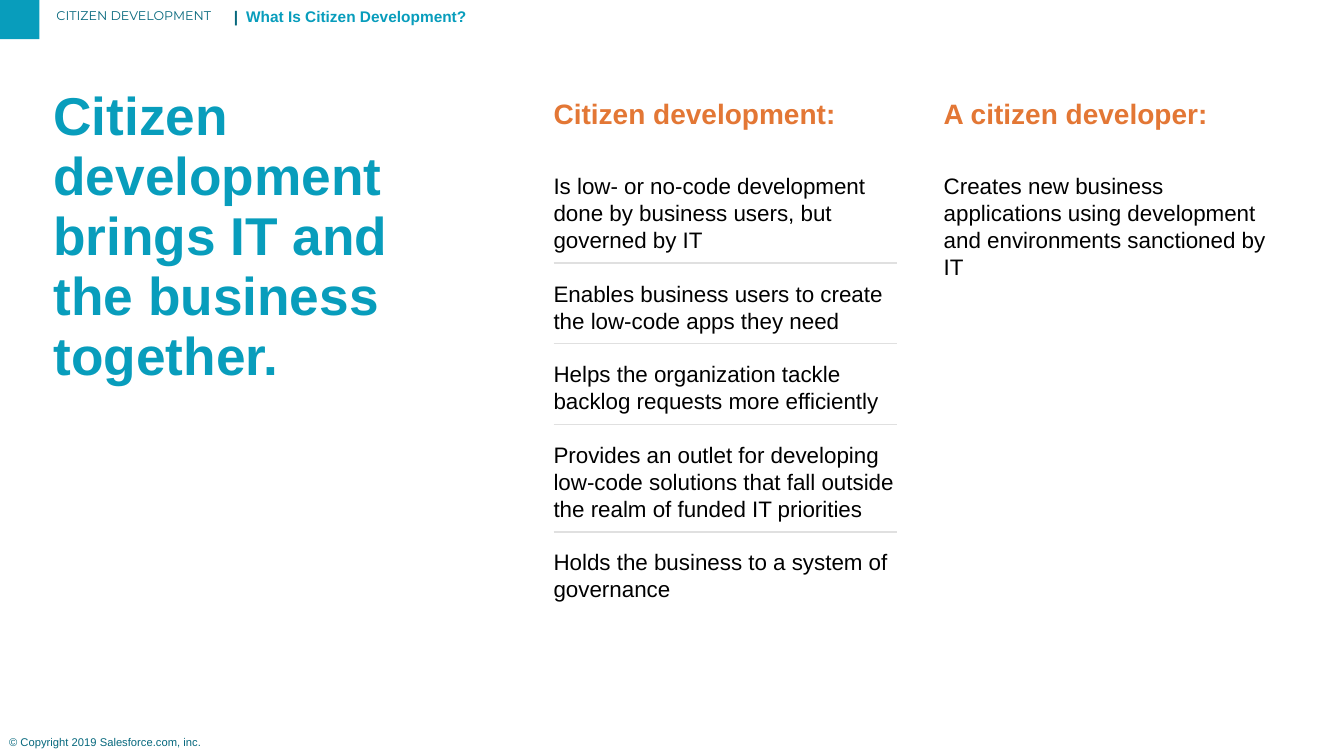
from lxml import etree
from pptx import Presentation
from pptx.dml.color import RGBColor
from pptx.enum.shapes import MSO_CONNECTOR, MSO_SHAPE
from pptx.enum.text import MSO_ANCHOR, MSO_AUTO_SIZE, PP_ALIGN
from pptx.oxml.ns import qn
from pptx.util import Inches, Pt

LEFT = PP_ALIGN.LEFT
TOP = MSO_ANCHOR.TOP
NO_AUTOFIT = MSO_AUTO_SIZE.NONE
RECTANGLE = MSO_SHAPE.RECTANGLE
STRAIGHT = MSO_CONNECTOR.STRAIGHT

COLORS = {"teal": "089DBC", "dark_teal": "06687D", "orange": "E37735",
          "black": "000000", "rule": "E0E0E0"}

HEADLINE = "Citizen development brings IT and the business together."
COURSE = "CITIZEN DEVELOPMENT"
TOPIC = "What Is Citizen Development?"
COPYRIGHT = "© Copyright 2019 Salesforce.com, inc."
COLUMNS = [
    {"heading": "Citizen development:",
     "box": (5.44, 0.93, 3.61, 6.01),
     "items": [
         "Is low- or no-code development done by business users, but governed by IT",
         "Enables business users to create the low-code apps they need",
         "Helps the organization tackle backlog requests more efficiently",
         "Provides an outlet for developing low-code solutions that fall outside "
         "the realm of funded IT priorities",
         "Holds the business to a system of governance"]},
    {"heading": "A citizen developer:",
     "box": (9.31, 0.93, 3.41, 4.96),
     "items": ["Creates new business applications using development and "
               "environments sanctioned by IT"]},
]
LINE_PITCH = 19.2  # points
RULE_LEFT, RULE_RIGHT, FIRST_RULE = 5.49, 8.9, 2.61
LINES_BETWEEN_RULES = [2, 2, 3]


def color(name):
    return RGBColor.from_string(COLORS[name])


def place(shape, box):
    """Position a text shape and give its frame the common settings."""
    shape.left, shape.top, shape.width, shape.height = map(Inches, box)
    frame = shape.text_frame
    frame.word_wrap = True
    frame.auto_size = NO_AUTOFIT
    frame.vertical_anchor = TOP
    frame.margin_left = frame.margin_right = Inches(0.05)
    frame.margin_top = frame.margin_bottom = Inches(0.05)
    return frame


def style(paragraph, size, color_name, bold=False, spacing=1.0, before=0, name="Arial"):
    paragraph.alignment = LEFT
    paragraph.line_spacing = spacing
    paragraph.space_before = Pt(before)
    paragraph.space_after = Pt(0)
    font = paragraph.font
    font.name, font.size, font.bold = name, Pt(size), bold
    font.color.rgb = color(color_name)


def remove_bullet(paragraph):
    properties = paragraph._p.get_or_add_pPr()
    properties.set("marL", "0")
    properties.set("indent", "0")
    etree.SubElement(properties, qn("a:buNone"))


def add_label(slide, text, box, **look):
    frame = place(slide.shapes.add_textbox(0, 0, 0, 0), box)
    frame.text = text
    style(frame.paragraphs[0], **look)


def add_topic(slide):
    paragraph = place(slide.shapes.add_textbox(0, 0, 0, 0), (2.27, 0.06, 3.75, 0.27)).paragraphs[0]
    tabs = etree.SubElement(paragraph._p.get_or_add_pPr(), qn("a:tabLst"))
    etree.SubElement(tabs, qn("a:tab"), pos=str(Inches(0.12)), algn="l")
    style(paragraph, 11, "teal", bold=True, spacing=0.8)
    bar = paragraph.add_run()
    bar.text = "|\t"
    bar.font.color.rgb = color("dark_teal")
    paragraph.add_run().text = TOPIC


def fill_column(placeholder, column):
    frame = place(placeholder, column["box"])
    frame.text = "\n".join([column["heading"], *column["items"]])
    heading, *items = frame.paragraphs
    remove_bullet(heading)
    style(heading, 20, "orange", bold=True, spacing=0.94)
    for index, item in enumerate(items):
        remove_bullet(item)
        style(item, 16, "black", spacing=Pt(LINE_PITCH),
              before=LINE_PITCH if index else 30)


def add_rules(slide):
    """Draw a rule in each blank line between the items."""
    tops = [FIRST_RULE]
    for lines in LINES_BETWEEN_RULES:
        tops.append(tops[-1] + (lines + 1) * LINE_PITCH / 72)
    for top in tops:
        rule = slide.shapes.add_connector(STRAIGHT, Inches(RULE_LEFT), Inches(top),
                                          Inches(RULE_RIGHT), Inches(top))
        rule.line.color.rgb = color("rule")
        rule.line.width = Pt(1)
        etree.SubElement(rule._element.spPr, qn("a:effectLst"))


def main():
    presentation = Presentation()
    presentation.slide_width, presentation.slide_height = Inches(13.33), Inches(7.5)
    slide = presentation.slides.add_slide(presentation.slide_layouts[3])
    title, *bodies = slide.placeholders

    corner = slide.shapes.add_shape(RECTANGLE, 0, Inches(-0.01), Inches(0.39), Inches(0.4))
    corner.shadow.inherit = False
    corner.fill.solid()
    corner.fill.fore_color.rgb = color("teal")
    corner.line.fill.background()

    add_label(slide, COPYRIGHT, (0.04, 7.25, 2.21, 0.22), size=8, color_name="dark_teal")
    add_label(slide, COURSE, (0.51, 0.06, 3.99, 0.27), size=9, color_name="dark_teal",
              spacing=0.8, name="Montserrat")
    add_topic(slide)

    headline = place(title, (0.48, 0.82, 3.99, 4.74))
    headline.text = HEADLINE
    style(headline.paragraphs[0], 38, "teal", bold=True, spacing=0.94)
    for body, column in zip(bodies, COLUMNS):
        fill_column(body, column)
    add_rules(slide)
    presentation.save("out.pptx")


if __name__ == "__main__":
    main()
